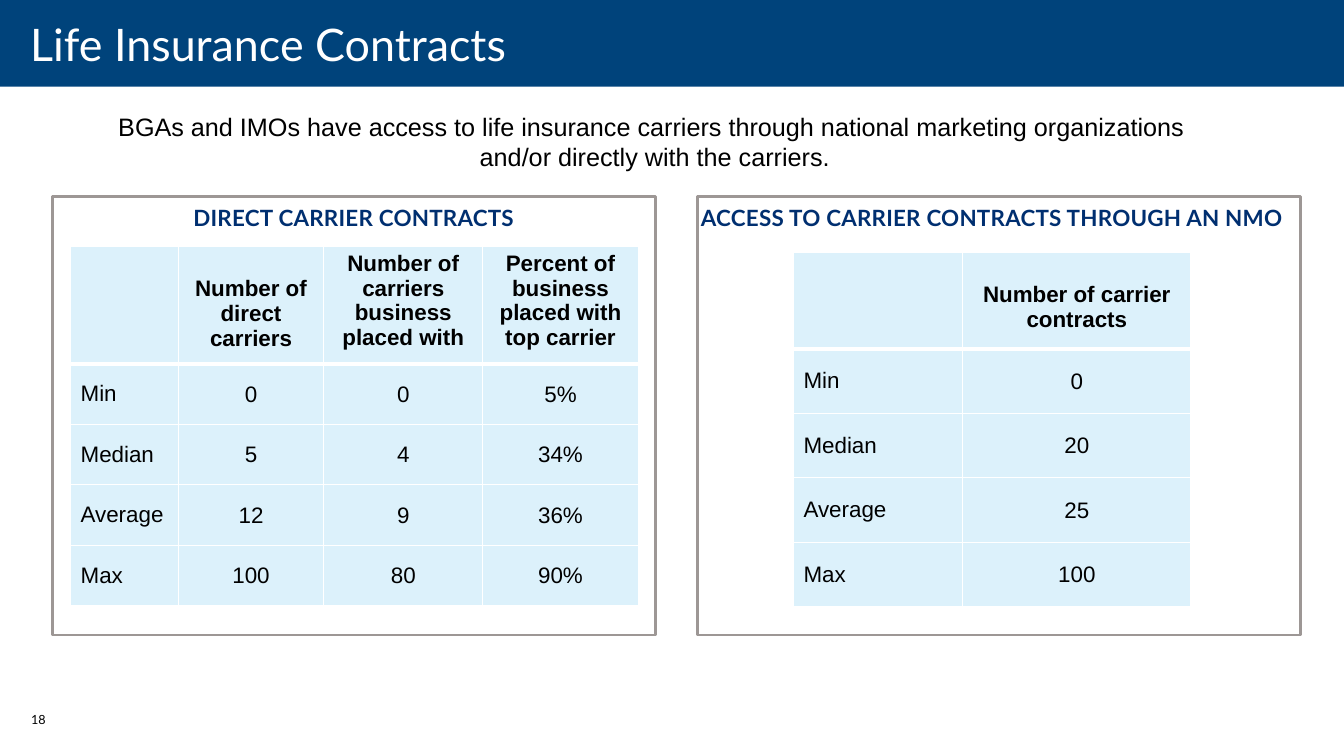
import pptx
import pptx.dml.color
import pptx.enum.shapes
import pptx.enum.text
import pptx.oxml
import pptx.oxml.ns
import pptx.util

Inches = pptx.util.Inches
Pt = pptx.util.Pt
ALIGN = pptx.enum.text.PP_ALIGN
ANCHOR = pptx.enum.text.MSO_ANCHOR
RECT = pptx.enum.shapes.MSO_SHAPE.RECTANGLE
NAVY, BLUE, GRAY, PALE = "002F70", "00437B", "9D9795", "DCF1FB"
WHITE, BLACK = "FFFFFF", "000000"


def color(code):
    """Turn a hex string into a color."""
    return pptx.dml.color.RGBColor.from_string(code)


def style(para, size, face, code, bold=False, align=ALIGN.LEFT):
    """Set the font and alignment of a paragraph."""
    para.alignment = align
    font = para.font
    font.size, font.name, font.bold = Pt(size), face, bold
    font.color.rgb = color(code)


def add_text(slide, box, text, size, face, code, bold=False,
             align=ALIGN.LEFT, anchor=ANCHOR.TOP):
    """Add a wrapped text box and return its frame."""
    frame = slide.shapes.add_textbox(*map(Inches, box)).text_frame
    frame.word_wrap = True
    frame.vertical_anchor = anchor
    para = frame.paragraphs[0]
    para.text = text
    style(para, size, face, code, bold, align)
    return frame


def add_rect(slide, box, fill=None, line=None):
    """Add a plain rectangle with a fill or an outline."""
    rect = slide.shapes.add_shape(RECT, *map(Inches, box))
    rect.shadow.inherit = False
    if fill:
        rect.fill.solid()
        rect.fill.fore_color.rgb = color(fill)
    else:
        rect.fill.background()
    if line:
        rect.line.color.rgb = color(line)
        rect.line.width = Pt(2)
    else:
        rect.line.fill.background()


def add_edges(cell, top, bottom):
    """Draw white borders round a cell, with widths in points."""
    props = cell._tc.get_or_add_tcPr()
    space = pptx.oxml.ns.nsdecls("a")
    for place, (side, width) in enumerate(
            [("L", 1), ("R", 1), ("T", top), ("B", bottom)]):
        props.insert(place, pptx.oxml.parse_xml(
            f'<a:ln{side} {space} w="{Pt(width)}"><a:solidFill>'
            f'<a:srgbClr val="{WHITE}"/></a:solidFill></a:ln{side}>'))


def fill_cell(cell, text, row, col, drop):
    """Write and format one table cell."""
    cell.fill.solid()
    cell.fill.fore_color.rgb = color(PALE)
    add_edges(cell, 3 if row == 1 else 1, 3 if row == 0 else 1)
    para = cell.text_frame.paragraphs[0]
    para.text = text
    align = ALIGN.CENTER if row == 0 or col else ALIGN.LEFT
    style(para, 16, "Arial", BLACK, row == 0, align)
    if row == 0:
        cell.margin_top = Inches(drop)
        return
    cell.vertical_anchor = ANCHOR.MIDDLE
    if col:
        cell.margin_left = cell.margin_right = cell.margin_top = Inches(0.01)
        cell.margin_bottom = 0


def add_grid(slide, left, top, widths, heights, rows, drops):
    """Add a table at the given corner."""
    table = slide.shapes.add_table(
        len(rows), len(widths), Inches(left), Inches(top),
        Inches(sum(widths)), Inches(sum(heights))).table
    for col, width in zip(table.columns, widths):
        col.width = Inches(width)
    for line, height in zip(table.rows, heights):
        line.height = Inches(height)
    for row, texts in enumerate(rows):
        for col, text in enumerate(texts):
            fill_cell(table.cell(row, col), text, row, col, drops[col])


def add_panel(slide, box, title, shift, inset, widths, heights, rows, drops):
    """Add a framed panel with a heading and a table."""
    left, top, width, _ = box
    add_rect(slide, box, line=GRAY)
    head = add_text(slide, (left + shift, top - 0.04, width, 0.44), title,
                    16, "Lato", NAVY, True, ALIGN.CENTER, ANCHOR.MIDDLE)
    para = head.paragraphs[0]
    para.line_spacing = 1.2
    para.space_after = Pt(12.6)
    para.runs[0]._r.get_or_add_rPr().set("spc", "20")
    add_grid(slide, left + inset[0], top + inset[1], widths, heights,
             rows, drops)


def add_banner(slide, box, title):
    """Add the title band across the top."""
    add_rect(slide, box, fill=BLUE)
    left, top, width, height = box
    frame = add_text(slide, (left, top - 0.05, width, height + 0.11), title,
                     32, "Lato", WHITE, anchor=ANCHOR.MIDDLE)
    frame.margin_left, frame.margin_right = Inches(0.3), Inches(0.2)
    frame.margin_top = frame.margin_bottom = 0


def main():
    """Build and save the slide."""
    deck = pptx.Presentation()
    deck.slide_width, deck.slide_height = Inches(13.33), Inches(7.5)
    slide = deck.slides.add_slide(deck.slide_layouts[6])
    add_banner(slide, (0, 0, 13.33, 0.86), "Life Insurance Contracts")
    add_text(slide, (0.33, 1.05, 12.33, 0.71),
             "BGAs and IMOs have access to life insurance carriers through "
             "national marketing organizations \vand/or directly with the "
             "carriers.", 18, "Arial", BLACK, align=ALIGN.CENTER)
    add_panel(slide, (0.52, 1.95, 5.98, 4.35), "DIRECT CARRIER CONTRACTS",
              0, (0.18, 0.49), [1.07, 1.44, 1.58, 1.54], [1.17] + [0.6] * 4,
              [["", "Number of direct carriers",
                "Number of carriers business placed with",
                "Percent of business placed with top carrier"],
               ["Min", "0", "0", "5%"],
               ["Median", "5", "4", "34%"],
               ["Average", "12", "9", "36%"],
               ["Max", "100", "80", "90%"]], [0.05, 0.3, 0.05, 0.05])
    add_panel(slide, (6.92, 1.95, 5.98, 4.35),
              "ACCESS TO CARRIER CONTRACTS THROUGH AN NMO",
              -0.07, (0.95, 0.55), [1.68, 2.26], [0.96] + [0.64] * 4,
              [["", "Number of carrier contracts"],
               ["Min", "0"],
               ["Median", "20"],
               ["Average", "25"],
               ["Max", "100"]], [0.05, 0.3])
    add_text(slide, (0.21, 7.01, 0.49, 0.4), "18", 9, "Lato", BLACK)
    deck.save("out.pptx")


if __name__ == "__main__":
    main()
